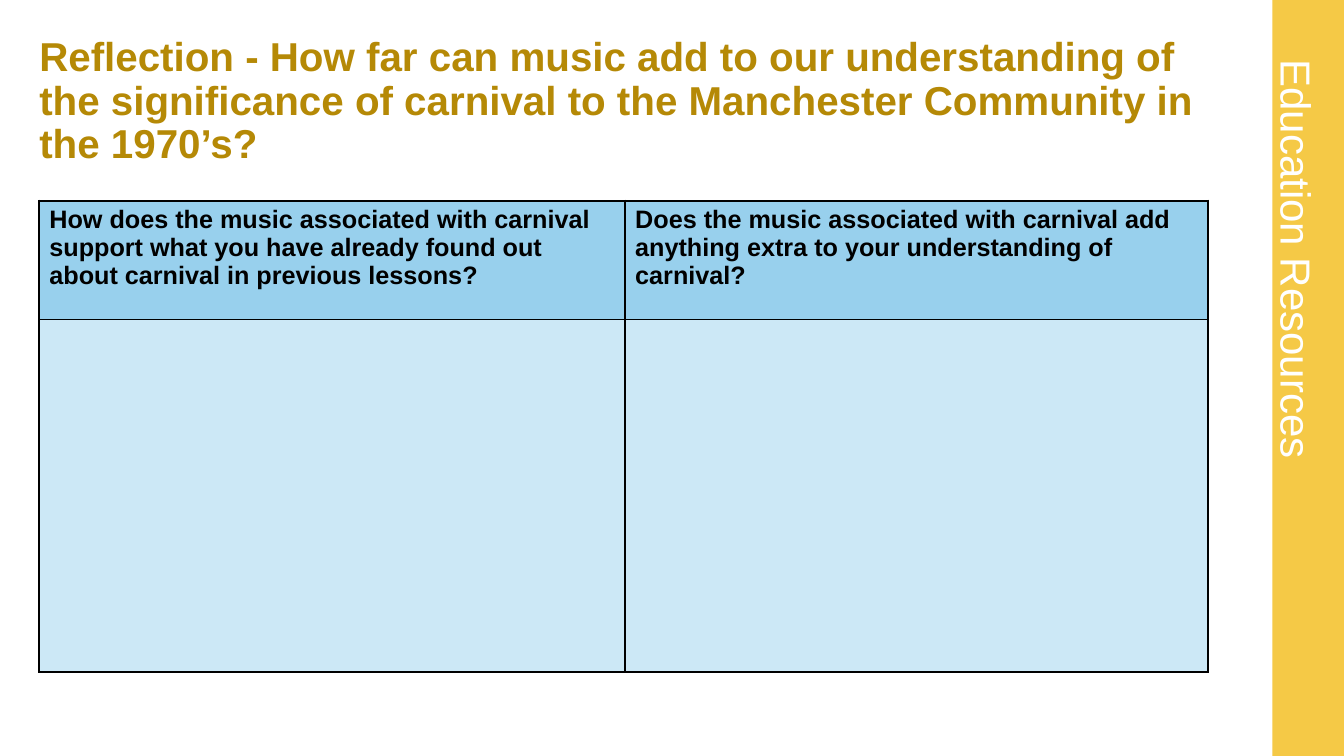
from pptx import Presentation
from pptx.dml.color import RGBColor
from pptx.enum.shapes import MSO_SHAPE
from pptx.enum.text import MSO_ANCHOR, PP_ALIGN
from pptx.oxml import parse_xml
from pptx.oxml.ns import nsdecls
from pptx.util import Inches, Pt

RECT = MSO_SHAPE.RECTANGLE
MIDDLE = MSO_ANCHOR.MIDDLE
CENTER = PP_ALIGN.CENTER

WHITE = RGBColor(0xFF, 0xFF, 0xFF)
BLACK = RGBColor(0x00, 0x00, 0x00)
YELLOW = RGBColor(0xF5, 0xC9, 0x46)
GOLD = RGBColor(0xB5, 0x89, 0x06)
HEAD_BLUE = RGBColor(0x98, 0xD0, 0xED)
BODY_BLUE = RGBColor(0xCC, 0xE8, 0xF6)

SLIDE_W, SLIDE_H = 13.33, 7.5
BAR_W = 0.71
MARGIN = 0.39

TITLE = ("Reflection - How far can music add to our understanding of the "
         "significance of carnival to the Manchester Community in the 1970’s?")
QUESTIONS = [
    "How does the music associated with carnival support what you have "
    "already found out about carnival in previous lessons?",
    "Does the music associated with carnival add anything extra to your "
    "understanding of carnival?",
]
COL_WIDTHS = [5.81, 5.78]
ROW_HEIGHTS = [1.18, 3.5]


def write(tf, text, size, color, bold=False):
    p = tf.paragraphs[0]
    r = p.add_run()
    r.text = text
    r.font.color.rgb = color
    for name, value in {"name": "Arial", "size": Pt(size), "bold": bold}.items():
        setattr(r.font, name, value)
    return p


def add_text_box(slide, box, insets, wrap):
    sp = slide.shapes.add_textbox(*map(Inches, box))
    tf = sp.text_frame
    tf.word_wrap = wrap
    for side, inset in zip(("left", "top", "right", "bottom"), insets):
        setattr(tf, f"margin_{side}", Inches(inset))
    return sp, tf


def add_sidebar(slide, x, y, w, h):
    sp = slide.shapes.add_shape(RECT, *map(Inches, (x, y, w, h)))
    sp.shadow.inherit = False
    sp.fill.solid()
    sp.fill.fore_color.rgb = YELLOW
    sp.line.fill.background()

    # Label turned to read downwards, centred on the bar
    label_w, label_h, label_mid = 4.01, 0.72, 2.57
    box = (x + 0.1 + (w - label_w) / 2, label_mid - label_h / 2, label_w, label_h)
    sp, tf = add_text_box(slide, box, (0, 0, 0, 0), wrap=False)
    sp.rotation = 90
    p = write(tf, "Education Resources", 30, WHITE)
    p.alignment = CENTER
    p.line_spacing = Pt(58.8)


def add_title(slide, x, y, w, h):
    # The deep bottom inset lifts the centred text clear of the table
    sp, tf = add_text_box(slide, (x, y, w, h), (0, 0.05, 0.1, 0.48), wrap=True)
    tf.vertical_anchor = MIDDLE
    write(tf, TITLE, 28.8, GOLD, bold=True).line_spacing = 0.9


def set_borders(cell, color, width):
    tc_pr = cell._tc.get_or_add_tcPr()
    for i, side in enumerate(("lnL", "lnR", "lnT", "lnB")):
        tc_pr.insert(i, parse_xml(
            f'<a:{side} {nsdecls("a")} w="{Pt(width)}"><a:solidFill>'
            f'<a:srgbClr val="{color}"/></a:solidFill></a:{side}>'))


def add_question_table(slide, x, y):
    size = (sum(COL_WIDTHS), sum(ROW_HEIGHTS))
    table = slide.shapes.add_table(len(ROW_HEIGHTS), len(COL_WIDTHS),
                                   *map(Inches, (x, y, *size))).table
    for col, width in zip(table.columns, COL_WIDTHS):
        col.width = Inches(width)
    for row, height, fill in zip(table.rows, ROW_HEIGHTS, (HEAD_BLUE, BODY_BLUE)):
        row.height = Inches(height)
        for cell in row.cells:
            cell.fill.solid()
            cell.fill.fore_color.rgb = fill
            set_borders(cell, BLACK, 1.5)
    for cell, question in zip(table.rows[0].cells, QUESTIONS):
        write(cell.text_frame, question, 18, BLACK, bold=True)


def main():
    prs = Presentation()
    prs.slide_width, prs.slide_height = Inches(SLIDE_W), Inches(SLIDE_H)
    slide = prs.slides.add_slide(prs.slide_layouts[6])
    add_sidebar(slide, SLIDE_W - BAR_W, 0, BAR_W, SLIDE_H)
    add_title(slide, MARGIN, 0.56, 12.03, 1.34)
    add_question_table(slide, MARGIN, 1.99)
    prs.save("out.pptx")


if __name__ == "__main__":
    main()
